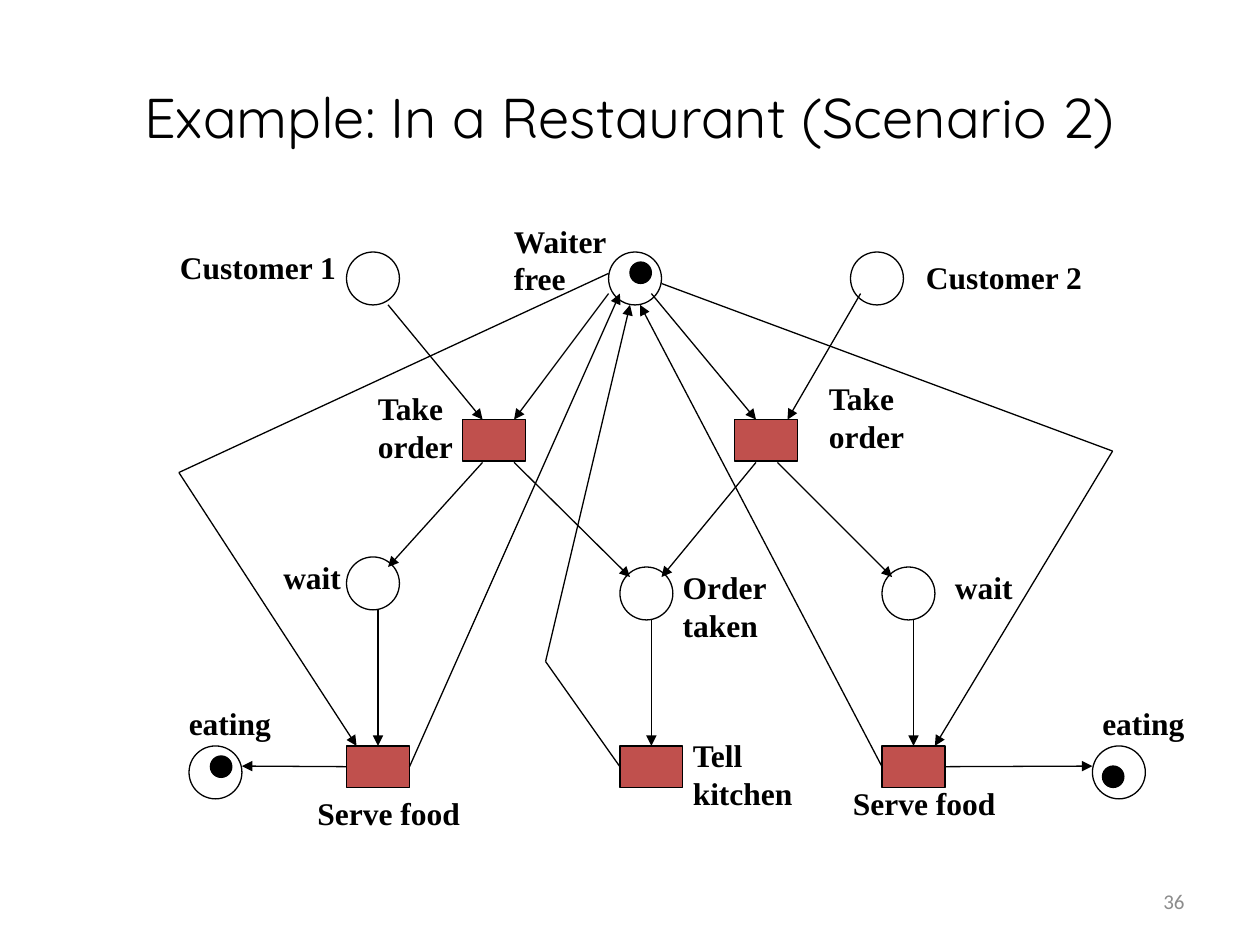
"""Draw a Petri net of a waiter serving two customers in a restaurant."""
from lxml.etree import SubElement
from pptx import Presentation
from pptx.dml.color import RGBColor
from pptx.enum.shapes import MSO_CONNECTOR, MSO_SHAPE
from pptx.enum.text import MSO_ANCHOR, MSO_AUTO_SIZE, PP_ALIGN
from pptx.oxml.ns import qn
from pptx.util import Inches, Pt

BLACK = RGBColor(0x00, 0x00, 0x00)
GRAY = RGBColor(0x8C, 0x8C, 0x8C)
RED = RGBColor(0xC0, 0x50, 0x4D)
TOP, LEFT, BOTTOM, RIGHT = range(4)
PLACE_SIZE = 0.42
TOKEN_SIZE = 0.17
TRANSITION_SIZE = (0.5, 0.33)


def write_text(frame, text, size=18, font="Times New Roman", color=BLACK,
               bold=False, align=PP_ALIGN.LEFT):
    frame.text = text
    for paragraph in frame.paragraphs:
        paragraph.alignment = align
        for run in paragraph.runs:
            run.font.size = Pt(size)
            run.font.name = font
            run.font.bold = bold
            run.font.color.rgb = color


class PetriNetSlide:
    def __init__(self, presentation):
        self.slide = presentation.slides.add_slide(presentation.slide_layouts[5])
        self.shapes = self.slide.shapes
        self.line_width = Pt(0.75)

    def title(self, text):
        title = self.shapes.title
        title.left, title.top = Inches(0.5), Inches(0.3)
        title.width, title.height = Inches(9), Inches(1.25)
        title.text_frame.vertical_anchor = MSO_ANCHOR.MIDDLE
        write_text(title.text_frame, text, size=32, font="Quicksand",
                   align=PP_ALIGN.CENTER)

    def slide_number(self, text):
        box = self.shapes.add_textbox(Inches(7.17), Inches(6.95), Inches(2.33), Inches(0.4))
        box.text_frame.word_wrap = True
        box.text_frame.vertical_anchor = MSO_ANCHOR.MIDDLE
        write_text(box.text_frame, text, size=12, font="Calibri", color=GRAY,
                   align=PP_ALIGN.RIGHT)

    def label(self, text, left, top, width):
        height = 0.71 if "\n" in text else 0.4
        box = self.shapes.add_textbox(Inches(left), Inches(top), Inches(width), Inches(height))
        box.text_frame.word_wrap = False
        box.text_frame.auto_size = MSO_AUTO_SIZE.SHAPE_TO_FIT_TEXT
        write_text(box.text_frame, text, bold=True)

    def node(self, kind, left, top, width, height, fill=None):
        shape = self.shapes.add_shape(kind, Inches(left), Inches(top),
                                      Inches(width), Inches(height))
        shape.shadow.inherit = False
        if fill is None:
            shape.fill.background()
        else:
            shape.fill.solid()
            shape.fill.fore_color.rgb = fill
        shape.line.color.rgb = BLACK
        shape.line.width = self.line_width
        return shape

    def place(self, left, top):
        return self.node(MSO_SHAPE.OVAL, left, top, PLACE_SIZE, PLACE_SIZE)

    def token(self, left, top):
        return self.node(MSO_SHAPE.OVAL, left, top, TOKEN_SIZE, TOKEN_SIZE, BLACK)

    def transition(self, left, top):
        return self.node(MSO_SHAPE.RECTANGLE, left, top, *TRANSITION_SIZE, RED)

    def arrow(self, *points, source=None, target=None):
        segments = []
        for start, end in zip(points, points[1:]):
            connector = self.shapes.add_connector(
                MSO_CONNECTOR.STRAIGHT, *(Inches(value) for value in start + end))
            connector.line.color.rgb = BLACK
            connector.line.width = self.line_width
            SubElement(connector._element.spPr, qn("a:effectLst"))
            segments.append(connector)
        SubElement(segments[-1].line._get_or_add_ln(), qn("a:tailEnd"), type="triangle")
        if source:
            segments[0].begin_connect(*source)
        if target:
            segments[-1].end_connect(*target)


def main():
    presentation = Presentation()
    presentation.slide_width, presentation.slide_height = Inches(10), Inches(7.5)
    net = PetriNetSlide(presentation)
    net.title("Example: In a Restaurant (Scenario 2)")
    net.slide_number("36")

    places = [(2.75, 2), (4.83, 2), (6.75, 2), (2.75, 4.42), (4.92, 4.5),
              (7, 4.5), (1.5, 5.92), (8.67, 5.92)]
    for position in places:
        net.place(*position)
    for left in (3.67, 5.83):
        net.transition(left, 3.33)
    serve_first, tell_kitchen, serve_second = (
        net.transition(left, 5.92) for left in (2.75, 4.92, 7))
    for position in [(5, 2.08), (1.67, 6), (8.75, 6.08)]:
        net.token(*position)

    order_arrows = [
        ((3.08, 2.42), (3.83, 3.33)),
        ((4.83, 2.33), (4.08, 3.33)),
        ((5.17, 2.33), (6, 3.33)),
        ((6.83, 2.33), (6.25, 3.33)),
        ((3.83, 3.67), (3.08, 4.5)),
        ((4.08, 3.67), (5, 4.58)),
        ((6, 3.67), (5.25, 4.58)),
        ((6.17, 3.67), (7.08, 4.58)),
    ]
    waiter_to_serving = [
        ((4.83, 2.17), (1.42, 3.75), (2.83, 5.92)),
        ((5.25, 2.25), (8.83, 3.58), (7.42, 5.92)),
    ]
    for points in order_arrows + waiter_to_serving:
        net.arrow(*points)

    net.arrow((3, 4.83), (3, 5.92), target=(serve_first, TOP))
    net.arrow((5.17, 4.92), (5.17, 5.92), target=(tell_kitchen, TOP))
    net.arrow((7.25, 4.92), (7.25, 5.92), target=(serve_second, TOP))
    net.arrow((2.75, 6.08), (1.92, 6.08), source=(serve_first, LEFT))
    net.arrow((7.5, 6.08), (8.67, 6.08), source=(serve_second, RIGHT))
    net.arrow((3.25, 6.08), (4.92, 2.33), source=(serve_first, RIGHT))
    net.arrow((4.92, 6.08), (4.33, 5.25), (5, 2.42), source=(tell_kitchen, LEFT))
    net.arrow((7, 6.08), (5.08, 2.42), source=(serve_second, LEFT))

    labels = [
        ("Waiter\nfree", 3.98, 1.71, 0.95),
        ("Customer 1", 1.33, 1.92, 1.45),
        ("Customer 2", 7.25, 2, 1.45),
        ("Take\norder", 2.9, 3.04, 0.81),
        ("Take\norder", 6.48, 2.96, 0.81),
        ("Order\ntaken", 5.32, 4.46, 0.88),
        ("Tell\nkitchen", 5.4, 5.79, 1),
        ("wait", 2.15, 4.38, 0.66),
        ("wait", 7.48, 4.46, 0.66),
        ("Serve food", 2.42, 6.25, 1.35),
        ("Serve food", 6.67, 6.17, 1.35),
        ("eating", 1.4, 5.54, 0.86),
        ("eating", 8.65, 5.54, 0.86),
    ]
    for label in labels:
        net.label(*label)

    presentation.save("out.pptx")


if __name__ == "__main__":
    main()
